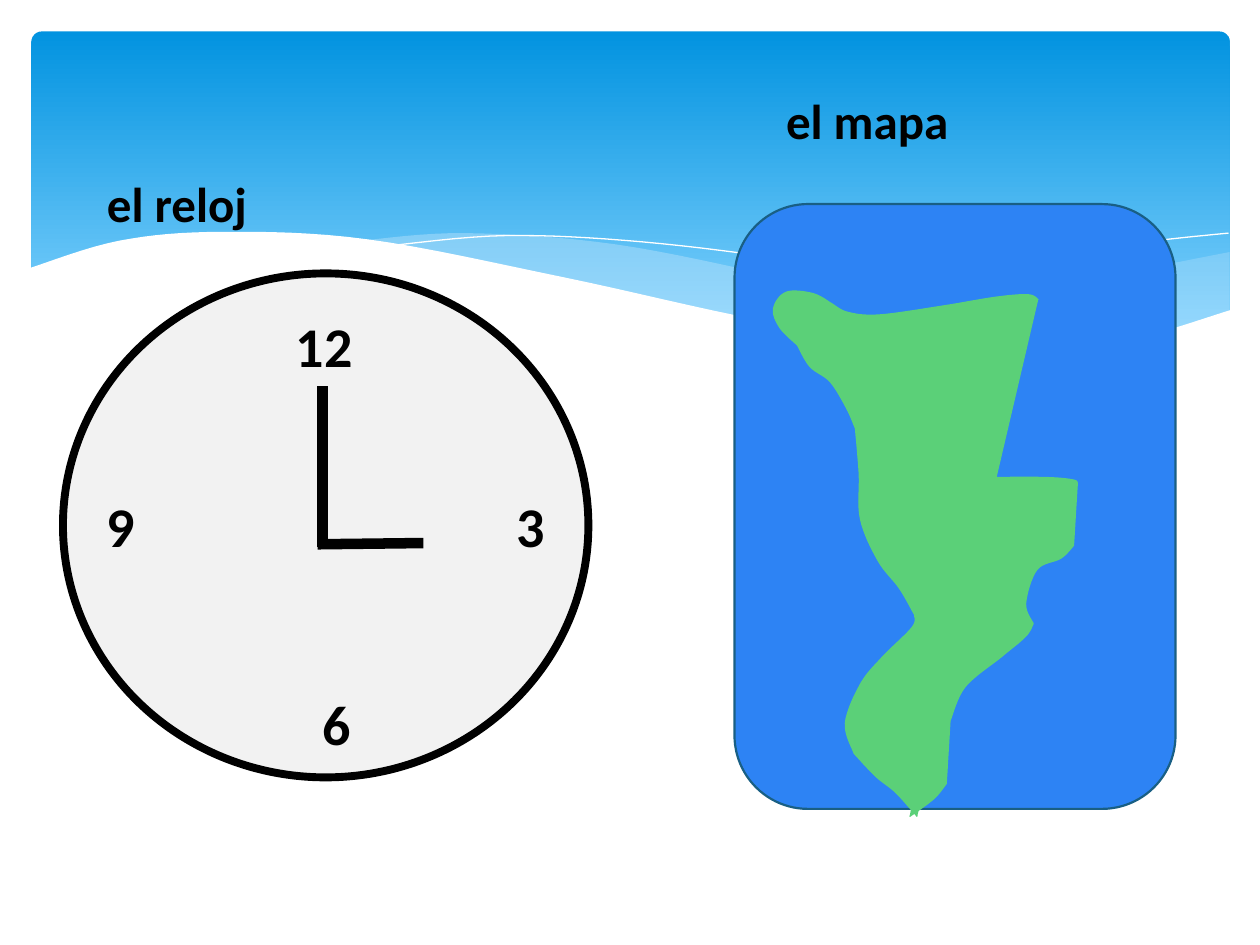
"""Build a Spanish vocabulary slide with a clock and a map."""
from itertools import chain

from lxml import etree
from pptx import Presentation
from pptx import util as u
from pptx.dml.color import RGBColor
from pptx.enum import shapes, text
from pptx.oxml import ns

BLACK, WHITE, FACE = "000000", "FFFFFF", "F2F2F2"
SKY, PALE_SKY, MIST = "0293E0", "83D3FE", "C6E7FC"
SEA, SHORE, LAND = "2D83F4", "195F84", "5BD078"

BANNER_BOX = (0.25, 0.25, 9.51, 2.7)
CLOCK_BOX = (0.5, 2.17, 4.17, 4)
SEA_BOX = (5.83, 1.62, 3.5, 4.8)

HOURS = {"12": (2.25, 2.42, 0.83), "3": (4, 3.85, 0.65),
         "6": (2.46, 5.42, 0.42), "9": (0.75, 3.85, 0.83)}
CAPTIONS = {"el reloj": (0.75, 1.33, 2.92), "el mapa": (6.14, 0.67, 2.28)}
HANDS = {"minute": (2.56, 4.34, 2.56, 3.06), "hour": (2.52, 4.32, 3.36, 4.31)}

RIGHT_WAVE = {
    "top": [(9.76, 2), (8.61, 2.23), (7.53, 2.48), (6.61, 2.65)],
    "bottom": [(6.61, 2.65), (7.32, 2.74), (8.03, 2.78), (8.72, 2.74), (9.28, 2.63), (9.76, 2.47)],
}
MIDDLE_WAVE = {
    "top": [(2.86, 1.91), (3.7, 1.85), (4.89, 1.94), (6.29, 2.22), (7.75, 2.54), (8.93, 2.73)],
    "bottom": [(8.93, 2.73), (8.18, 2.78), (7.22, 2.74), (6.01, 2.55), (4.49, 2.22), (2.86, 1.91)],
}
FRONT_WAVE = {
    "top": [(0.23, 2.13), (0.95, 1.91), (1.77, 1.84), (2.92, 1.9), (4.47, 2.2),
            (6.03, 2.54), (7.26, 2.72), (8.23, 2.77), (8.99, 2.69), (9.77, 2.46)],
    "right side": [(9.77, 2.46), (9.77, 3.29)],
    "base": [(9.77, 3.29), (0.23, 3.29)],
}
LEFT_CREST = {"line": [(3.09, 1.95), (4.01, 1.87), (5.1, 1.92), (6.36, 2.08),
                       (7.6, 2.33), (9.07, 2.72)]}
RIGHT_CREST = {"line": [(6.13, 2.57), (7.2, 2.29), (8.36, 2.04), (9.1, 1.92), (9.75, 1.85)]}

WEST_LAND = {
    "north border": [(8.24, 2.38), (8.16, 2.34), (7.9, 2.36), (7.48, 2.43),
                     (6.98, 2.5), (6.73, 2.48), (6.6, 2.41)],
    "cape": [(6.6, 2.41), (6.45, 2.33), (6.24, 2.32), (6.14, 2.45), (6.19, 2.6), (6.33, 2.74)],
    "upper coast": [(6.33, 2.74), (6.43, 2.91), (6.59, 3.03), (6.72, 3.24), (6.79, 3.4)],
    "lower coast": [(6.79, 3.4), (6.82, 3.76), (6.83, 4.12), (6.97, 4.45),
                    (7.14, 4.67), (7.26, 4.88)],
    "bulge": [(7.26, 4.88), (7.24, 4.98), (7, 5.22), (6.83, 5.43), (6.71, 5.74), (6.78, 5.98)],
    "south tip": [(6.78, 5.98), (6.95, 6.16), (7.1, 6.28), (7.22, 6.41), (7.28, 6.48)],
}
EAST_LAND = {
    "south tip": [(7.22, 6.48), (7.41, 6.34), (7.51, 6.22)],
    "south coast": [(7.51, 6.22), (7.54, 5.72)],
    "gulf": [(7.54, 5.72), (7.66, 5.45), (7.95, 5.21), (8.14, 5.05), (8.2, 4.95)],
    "bay": [(8.2, 4.95), (8.14, 4.79), (8.23, 4.52), (8.42, 4.43), (8.52, 4.33)],
    "east coast": [(8.52, 4.33), (8.55, 3.84)],
    "shoulder": [(8.55, 3.84), (8.52, 3.81), (8.3, 3.79), (7.85, 3.79)],
    "inland edge": [(7.85, 3.79), (7.47, 3.66), (7.19, 3.4), (7.35, 2.86), (7.92, 2.6)],
}


def rgb(code):
    """Return the colour for a hex string."""
    return RGBColor.from_string(code)


def smooth(knots, steps=8):
    """Return points on the Catmull-Rom curve that passes through the knots."""
    padded = [knots[0], *knots, knots[-1]]
    points = [knots[0]]
    for before, start, end, after in zip(padded, padded[1:], padded[2:], padded[3:]):
        for step in range(1, steps + 1):
            t = step / steps
            points.append(tuple(
                b + t / 2 * (c - a + t * (2 * a - 5 * b + 4 * c - d
                                          + t * (3 * (b - c) + d - a)))
                for a, b, c, d in zip(before, start, end, after)))
    return points


def paint(figure, fill=None, line=None, width=0, opacity=100):
    """Set the fill and line of a shape and drop its shadow."""
    figure.shadow.inherit = False
    if fill:
        figure.fill.solid()
        figure.fill.fore_color.rgb = rgb(fill)
        if opacity < 100:
            tint = figure.fill._xPr.find(".//" + ns.qn("a:srgbClr"))
            etree.SubElement(tint, ns.qn("a:alpha"), val=str(opacity * 1000))
    else:
        figure.fill.background()
    if line:
        figure.line.color.rgb = rgb(line)
        figure.line.width = u.Pt(width)
    else:
        figure.line.fill.background()


def add_outline(slide, sections, close=True, **style):
    """Draw smooth sections that meet at sharp corners."""
    points = chain.from_iterable(smooth(knots) for knots in sections.values())
    start, *rest = [(u.Inches(x), u.Inches(y)) for x, y in points]
    builder = slide.shapes.build_freeform(*start)
    builder.add_line_segments(rest, close=close)
    paint(builder.convert_to_shape(), **style)


def add_preset(slide, preset, box, **style):
    """Draw a preset shape in a box given in inches."""
    figure = slide.shapes.add_shape(preset, *map(u.Inches, box))
    paint(figure, **style)
    return figure


def add_banner(slide):
    """Draw the gradient banner and its waves."""
    banner = add_preset(slide, shapes.MSO_SHAPE.ROUNDED_RECTANGLE, BANNER_BOX)
    banner.adjustments[0] = 0.03
    banner.fill.gradient()
    banner.fill.gradient_angle = 270
    shades = [(0, SKY), (0.9, PALE_SKY)]
    for stop, (position, shade) in zip(banner.fill.gradient_stops, shades):
        stop.position = position
        stop.color.rgb = rgb(shade)
    for wave, opacity in ((RIGHT_WAVE, 29), (MIDDLE_WAVE, 40)):
        add_outline(slide, wave, fill=MIST, opacity=opacity)
    for crest in (LEFT_CREST, RIGHT_CREST):
        add_outline(slide, crest, close=False, line=WHITE)
    add_outline(slide, FRONT_WAVE, fill=WHITE)


def add_clock(slide):
    """Draw the clock face, its hours and its hands."""
    add_preset(slide, shapes.MSO_SHAPE.OVAL, CLOCK_BOX, fill=FACE, line=BLACK, width=4.5)
    add_labels(slide, HOURS, height=0.64, size=32)
    for ends in HANDS.values():
        hand = slide.shapes.add_connector(shapes.MSO_CONNECTOR.STRAIGHT, *map(u.Inches, ends))
        hand.line.color.rgb = rgb(BLACK)
        hand.line.width = u.Pt(6)
        etree.SubElement(hand._element.spPr, ns.qn("a:effectLst"))


def add_map(slide):
    """Draw the sea and the two halves of the land."""
    add_preset(slide, shapes.MSO_SHAPE.ROUNDED_RECTANGLE, SEA_BOX,
               fill=SEA, line=SHORE, width=1.25)
    for land in (WEST_LAND, EAST_LAND):
        add_outline(slide, land, close=False, fill=LAND, line=LAND, width=0.75)


def add_labels(slide, labels, height, size):
    """Write bold labels at their left, top and width."""
    for words, (left, top, width) in labels.items():
        label = slide.shapes.add_textbox(*map(u.Inches, (left, top, width, height)))
        frame = label.text_frame
        frame.word_wrap = True
        frame.auto_size = text.MSO_AUTO_SIZE.SHAPE_TO_FIT_TEXT
        frame.text = words
        font = frame.paragraphs[0].runs[0].font
        font.name, font.size, font.bold = "Calibri", u.Pt(size), True
        font.color.rgb = rgb(BLACK)


def main():
    """Build and save the slide."""
    deck = Presentation()
    deck.slide_width, deck.slide_height = u.Inches(10), u.Inches(7.5)
    slide = deck.slides.add_slide(deck.slide_layouts[6])
    add_banner(slide)
    add_clock(slide)
    add_map(slide)
    add_labels(slide, CAPTIONS, height=0.57, size=28)
    deck.save("out.pptx")


if __name__ == "__main__":
    main()
